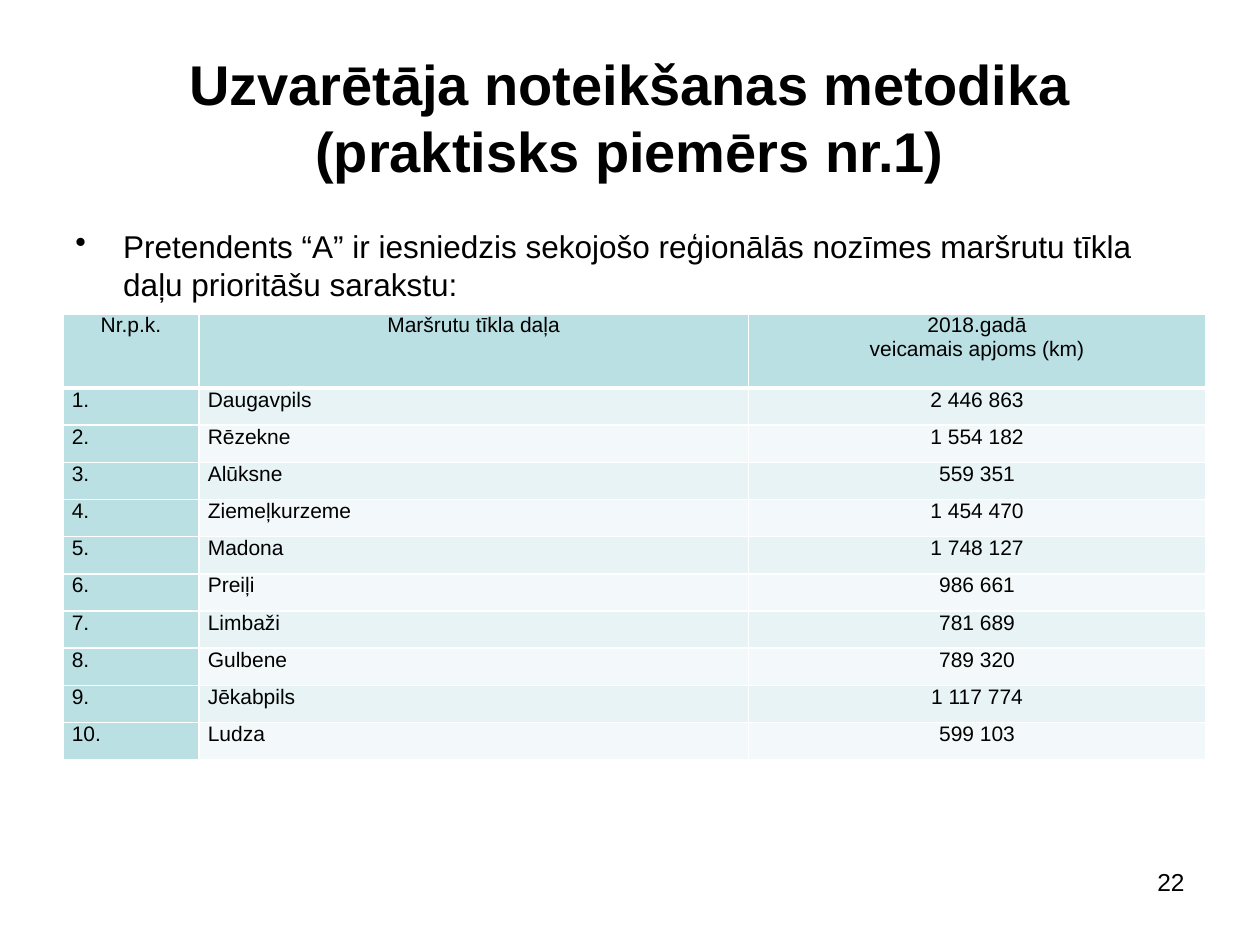
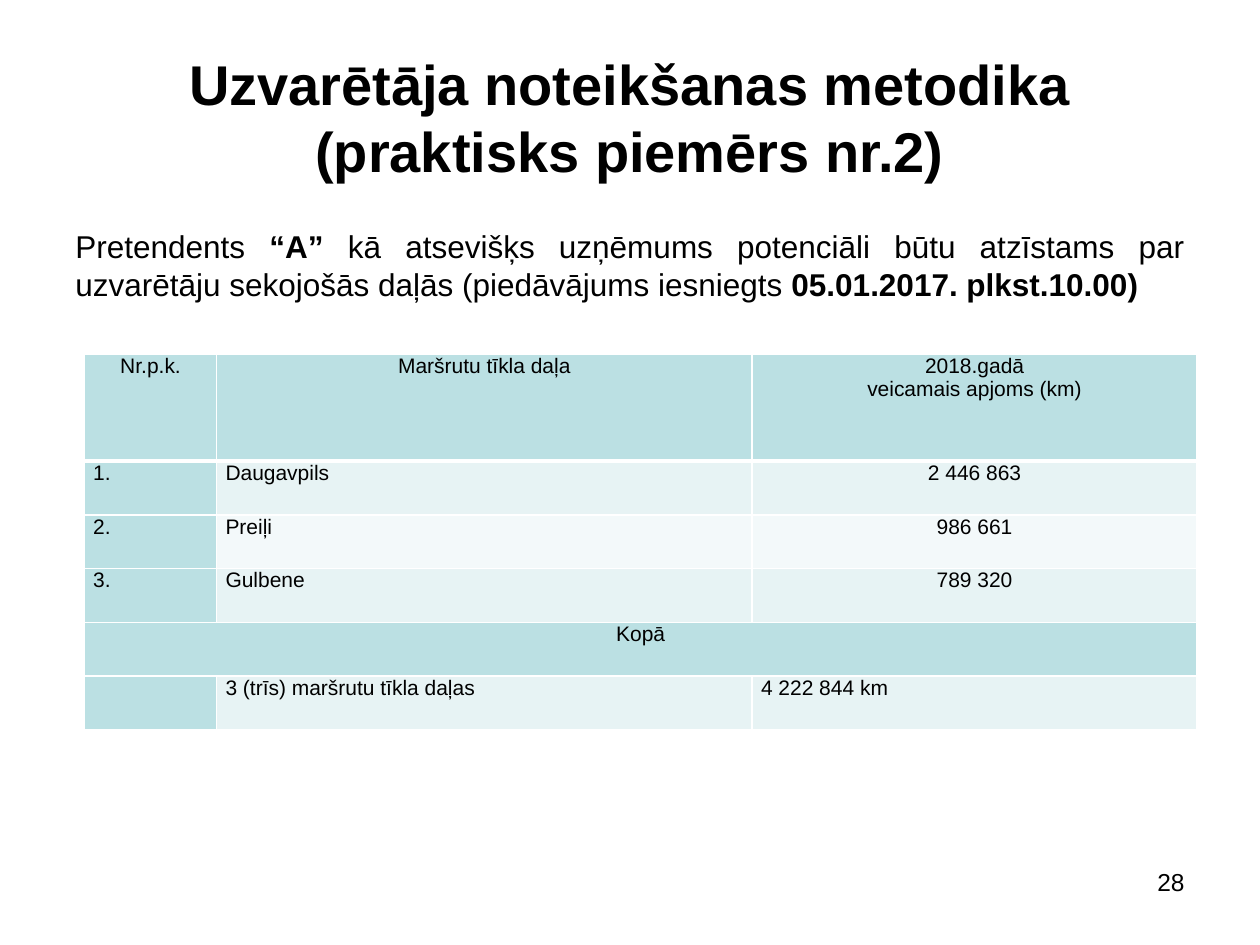
import pptx
import pptx.util
import pptx.dml.color
import pptx.enum.text
import pptx.oxml.ns
import lxml.etree

ALIGN = pptx.enum.text.PP_ALIGN
ANCHOR = pptx.enum.text.MSO_ANCHOR
PX = 9144  # EMU in one px, 100 px to the inch

THEME = {
    "font": "Arial",
    "ink": "000000",
    "head": "BBE0E3",
    "bands": ("E7F3F4", "F3F9FA"),
    "rule": "FFFFFF",
    "title": {"size": 32, "bold": True},
    "body": {"size": 18},
    "cell": {"size": 12},
    "page": {"size": 14},
}
TITLE_BOX = (50, 30, 900, 125)
BODY_BOX = (50, 175, 900, 495)
PAGE_BOX = (717, 683, 233, 52)
INSETS = {"margin_left": 7 * PX, "margin_right": 7 * PX,
          "margin_top": 0, "margin_bottom": 0}

TITLE = "Uzvarētāja noteikšanas metodika\v(praktisks piemērs nr.{})"
HEADS = ("Nr.p.k.", "Maršrutu tīkla daļa", "2018.gadā\nveicamais apjoms (km)")

SLIDES = [
    {
        "case": 1,
        "page": 22,
        "intro": [("Pretendents “A” ir iesniedzis sekojošo reģionālās nozīmes "
                   "maršrutu tīkla daļu prioritāšu sarakstu:", False)],
        "bullet": True,
        "at": (50, 249),
        "cols": (108, 436, 363),
        "rows": (59, 29.5),
        "parts": [
            ("Daugavpils", "2 446 863"),
            ("Rēzekne", "1 554 182"),
            ("Alūksne", "559 351"),
            ("Ziemeļkurzeme", "1 454 470"),
            ("Madona", "1 748 127"),
            ("Preiļi", "986 661"),
            ("Limbaži", "781 689"),
            ("Gulbene", "789 320"),
            ("Jēkabpils", "1 117 774"),
            ("Ludza", "599 103"),
        ],
        "total": None,
    },
    {
        "case": 2,
        "page": 28,
        "intro": [("Pretendents ", False), ("“A” ", True),
                  ("kā atsevišķs uzņēmums potenciāli būtu atzīstams par "
                   "uzvarētāju sekojošās daļās (piedāvājums iesniegts ", False),
                  ("05.01.2017. plkst.10.00)", True)],
        "bullet": False,
        "at": (67, 281),
        "cols": (105, 425, 353),
        "rows": (85, 42.7),
        "parts": [
            ("Daugavpils", "2 446 863"),
            ("Preiļi", "986 661"),
            ("Gulbene", "789 320"),
        ],
        "total": ("Kopā", ("", "3 (trīs) maršrutu tīkla daļas", "4 222 844 km")),
    },
]


def put(item, **vals):
    for name, val in vals.items():
        setattr(item, name, val)


def emu(px):
    return pptx.util.Emu(round(px * PX))


def hue(code):
    return pptx.dml.color.RGBColor.from_string(code)


def style(run, size, bold=False):
    put(run.font, name=THEME["font"], size=pptx.util.Pt(size), bold=bold)
    run.font.color.rgb = hue(THEME["ink"])


def write(frame, text, align, **form):
    """Fill a frame, one paragraph for each line of the text."""
    frame.text = text
    for para in frame.paragraphs:
        para.alignment = align
        for run in para.runs:
            style(run, **form)


def add_box(slide, box):
    frame = slide.shapes.add_textbox(*map(emu, box)).text_frame
    frame.word_wrap = True
    return frame


def add_mark(para):
    """Give a paragraph a round bullet with a hanging indent."""
    props = para._p.get_or_add_pPr()
    props.set("marL", str(38 * PX))
    props.set("indent", str(-38 * PX))
    mark = lxml.etree.SubElement(props, pptx.oxml.ns.qn("a:buChar"))
    mark.set("char", "•")


def add_rules(cell, foot):
    """Draw the four cell borders; foot is the width of the lower one."""
    props = cell._tc.get_or_add_tcPr()
    for side, width in zip("LRTB", (1, 1, 1, foot)):
        line = lxml.etree.SubElement(props, pptx.oxml.ns.qn("a:ln" + side))
        line.set("w", str(pptx.util.Pt(width)))
        fill = lxml.etree.SubElement(line, pptx.oxml.ns.qn("a:solidFill"))
        tint = lxml.etree.SubElement(fill, pptx.oxml.ns.qn("a:srgbClr"))
        tint.set("val", THEME["rule"])


def add_intro(slide, data):
    para = add_box(slide, BODY_BOX).paragraphs[0]
    if data["bullet"]:
        add_mark(para)
    else:
        para.alignment = ALIGN.JUSTIFY
    for text, bold in data["intro"]:
        run = para.add_run()
        run.text = text
        style(run, bold=bold, **THEME["body"])


def list_rows(data):
    """Return rows of (texts, alignments), the header first."""
    mid, side = ALIGN.CENTER, ALIGN.JUSTIFY
    rows = [(HEADS, (mid,) * 3)]
    for num, part in enumerate(data["parts"], 1):
        rows.append(((f"{num}.", *part), (side, side, mid)))
    if data["total"]:
        label, sums = data["total"]
        rows.append(((label, "", ""), (mid,) * 3))
        rows.append((sums, (side,) * 3))
    return rows


def add_grid(slide, data):
    rows, cols = list_rows(data), data["cols"]
    head, step = data["rows"]
    size = (sum(cols), head + step * (len(rows) - 1))
    grid = slide.shapes.add_table(
        len(rows), len(cols), *map(emu, data["at"] + size)).table
    put(grid, first_row=False, horz_banding=False)
    for col, width in zip(grid.columns, cols):
        col.width = emu(width)
    span = len(data["parts"]) + 1 if data["total"] else None
    for r, (texts, aligns) in enumerate(rows):
        grid.rows[r].height = emu(step if r else head)
        for c, (text, align) in enumerate(zip(texts, aligns)):
            cell = grid.cell(r, c)
            put(cell, **INSETS)
            add_rules(cell, 1 if r else 3)
            strong = r in (0, span) or c == 0
            cell.fill.solid()
            cell.fill.fore_color.rgb = hue(
                THEME["head"] if strong else THEME["bands"][(r - 1) % 2])
            if text:
                write(cell.text_frame, text, align, **THEME["cell"])
    if span:
        grid.cell(span, 0).merge(grid.cell(span, len(cols) - 1))


def add_slide(deck, data):
    slide = deck.slides.add_slide(deck.slide_layouts[6])
    title = add_box(slide, TITLE_BOX)
    title.vertical_anchor = ANCHOR.MIDDLE
    write(title, TITLE.format(data["case"]), ALIGN.CENTER, **THEME["title"])
    add_intro(slide, data)
    add_grid(slide, data)
    write(add_box(slide, PAGE_BOX), str(data["page"]), ALIGN.RIGHT,
          **THEME["page"])


def main():
    deck = pptx.Presentation()
    put(deck, slide_width=emu(1000), slide_height=emu(750))
    for data in SLIDES:
        add_slide(deck, data)
    deck.save("out.pptx")


if __name__ == "__main__":
    main()
